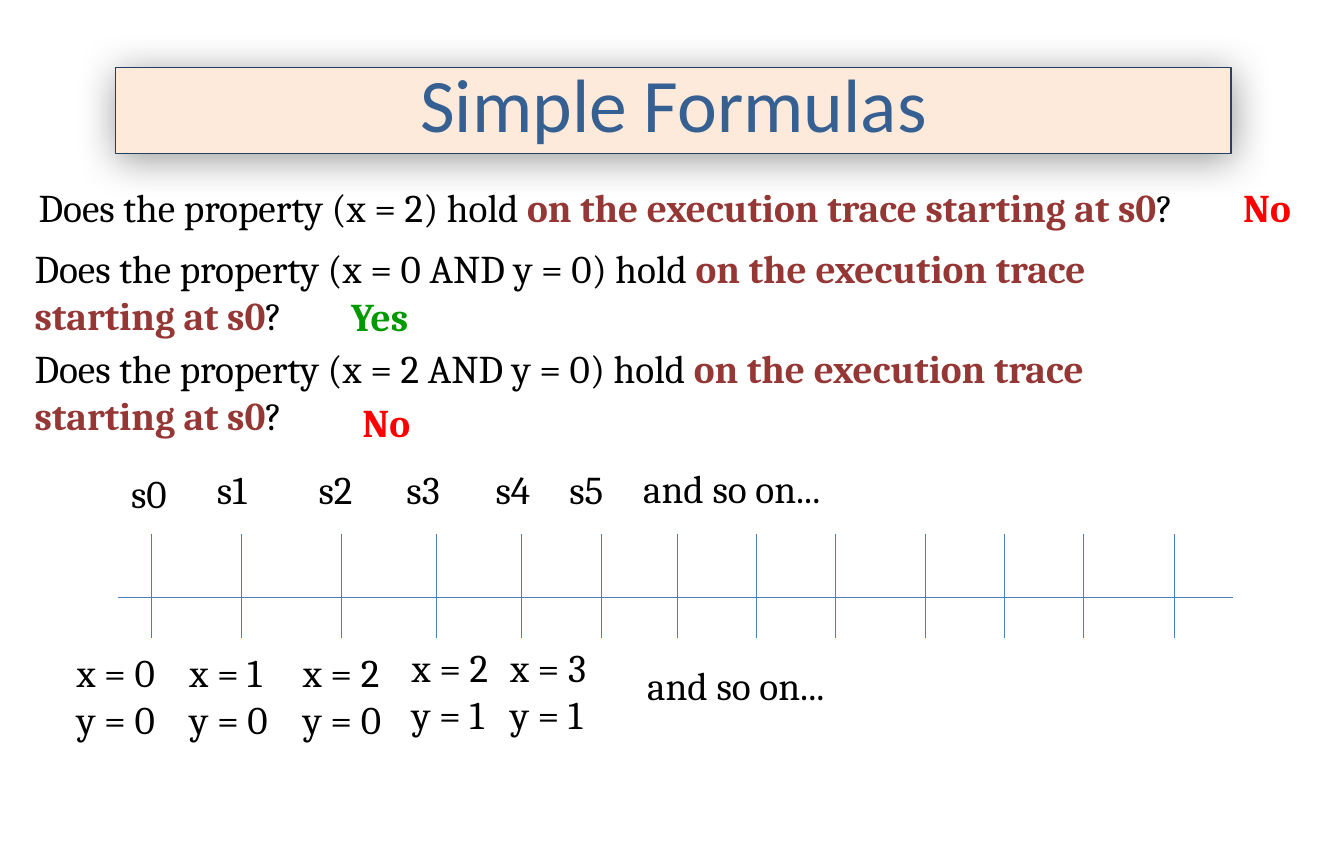
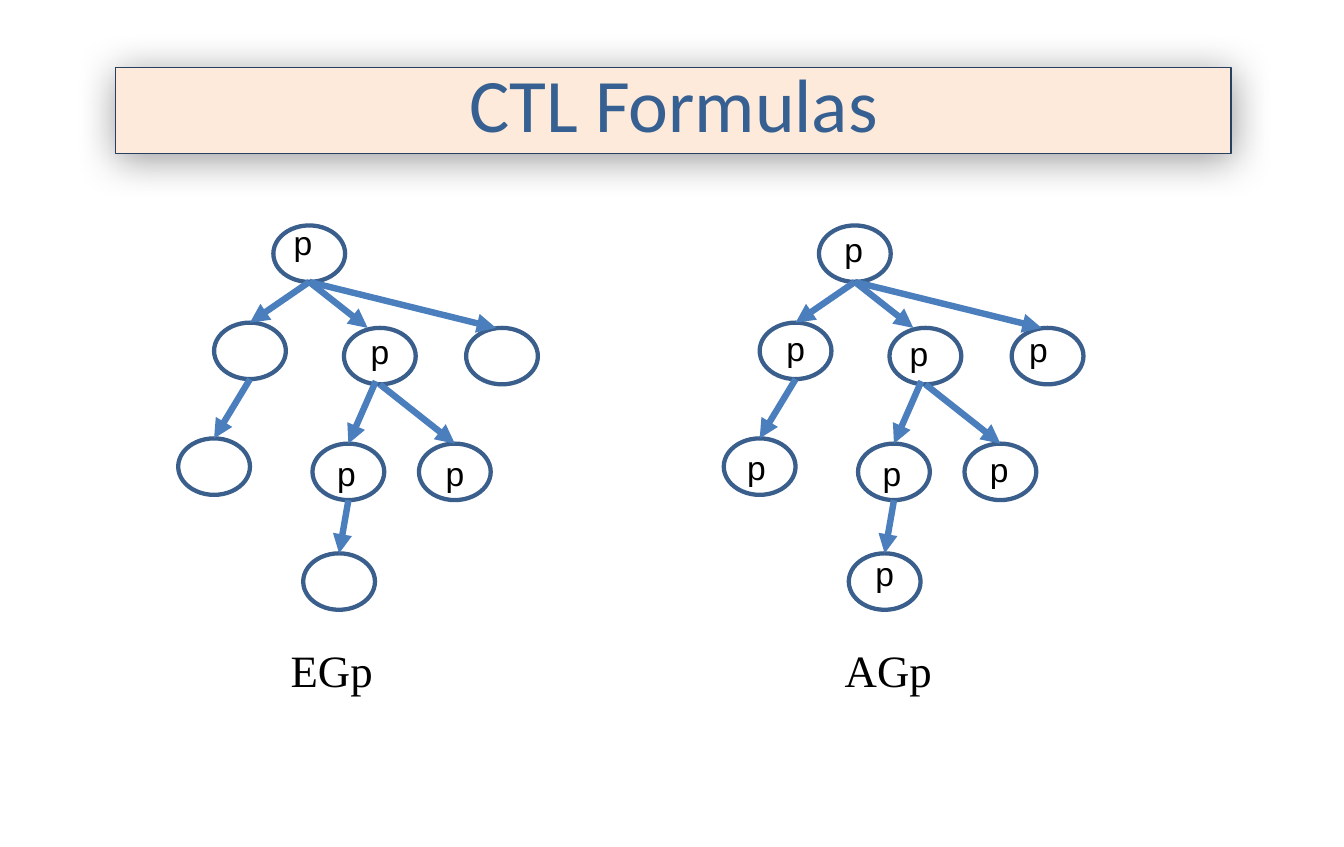
"""Build two slides on temporal logic: simple formulas on a trace and CTL formulas on trees."""
from lxml.etree import SubElement
from pptx import Presentation
from pptx.dml.color import RGBColor
from pptx.enum.shapes import MSO_CONNECTOR, MSO_SHAPE
from pptx.enum.text import MSO_ANCHOR, MSO_AUTO_SIZE, PP_ALIGN
from pptx.oxml.ns import qn
from pptx.util import Cm, Pt

BLACK, MAROON, GREEN, RED = "000000", "953735", "009900", "FF0000"
TITLE_FILL, TITLE_LINE, TITLE_TEXT = "FDEADA", "254061", "376092"
NODE_LINE, CONNECTOR_LINE = "3A5F8C", "4B7EBC"

QUESTIONS = [
    ("x = 2", 0.71, 4.42, 31.98),
    ("x = 0 AND y = 0", 0.61, 5.92, 29.64),
    ("x = 2 AND y = 0", 0.61, 8.41, 29.64),
]
ANSWERS = [("No", RED, 30.58, 4.42), ("Yes", GREEN, 8.46, 7.11), ("No", RED, 8.74, 9.75)]
TICKS = [3.76, 5.99, 8.46, 10.82, 12.93, 14.91, 16.81, 18.75, 20.73, 22.94, 24.92, 26.87, 29.13]
TRACE_LABELS = [
    ("s0", 3, 11.51, 1.6),
    ("s1", 5.13, 11.4, 1.6),
    ("s2", 7.65, 11.4, 1.6),
    ("s3", 9.83, 11.4, 1.6),
    ("s4", 12.04, 11.4, 1.6),
    ("s5", 13.87, 11.4, 1.6),
    ("and so on...", 15.7, 11.38, 8.13),
    ("x = 0\ny = 0", 1.65, 15.95, 2.95),
    ("x = 1\ny = 0", 4.45, 15.95, 2.95),
    ("x = 2\ny = 0", 7.26, 15.95, 2.95),
    ("x = 2\ny = 1", 9.96, 15.82, 2.95),
    ("x = 3\ny = 1", 12.4, 15.82, 2.95),
    ("and so on...", 15.8, 16.26, 8.13),
]

NODE_WIDTH, NODE_HEIGHT = 1.78, 1.4
NODES = {
    "root": (6.78, 5.59),
    "left": (5.31, 8),
    "middle": (8.53, 8.13),
    "right": (11.56, 8.13),
    "left leaf": (4.42, 10.87),
    "middle child": (7.75, 11),
    "middle leaf": (10.39, 11),
    "bottom leaf": (7.52, 13.72),
}
ARROWS = [
    ("root", "middle", (0, 0), -0.3),
    ("root", "right", (0, 0), -0.15),
    ("root", "left", (0, 0), 0),
    ("left", "left leaf", (0, 0), 0),
    ("middle", "middle child", (-0.1, -0.08), 0),
    ("middle", "middle leaf", (0, 0), 0),
    ("middle child", "bottom leaf", (0, 0), 0),
]
TREES = [
    {
        "caption": "EGp", "caption_left": 6.96, "shift": 0,
        "labels": {
            "root": (0.25, -0.2), "middle": (0.41, -0.05),
            "middle child": (0.36, 0.1), "middle leaf": (0.41, 0.1),
        },
    },
    {
        "caption": "AGp", "caption_left": 20.7, "shift": 13.53,
        "labels": {
            "root": (0.38, -0.05), "left": (0.41, 0), "middle": (0.25, 0),
            "right": (0.18, -0.1), "left leaf": (0.33, 0.08), "middle child": (0.36, 0.1),
            "middle leaf": (0.38, 0), "bottom leaf": (0.41, -0.13),
        },
    },
]


def color(value):
    return RGBColor.from_string(value)


def add_run(paragraph, text, font="Cambria", size=27.6, fill=BLACK, bold=False):
    run = paragraph.add_run()
    run.text = text
    run.font.name = font
    run.font.size = Pt(size)
    run.font.bold = bold
    run.font.color.rgb = color(fill)


def add_text(slide, text, left, top, width, height=1.42, **style):
    frame = slide.shapes.add_textbox(Cm(left), Cm(top), Cm(width), Cm(height)).text_frame
    frame.word_wrap = True
    for index, line in enumerate(text.split("\n")):
        paragraph = frame.add_paragraph() if index else frame.paragraphs[0]
        add_run(paragraph, line, **style)
    return frame.paragraphs[0]


def add_line(slide, start, end, width, arrow=False):
    points = [Cm(value) for value in (*start, *end)]
    connector = slide.shapes.add_connector(MSO_CONNECTOR.STRAIGHT, *points)
    connector.line.color.rgb = color(CONNECTOR_LINE)
    connector.line.width = Pt(width)
    if arrow:
        SubElement(connector.line._get_or_add_ln(), qn("a:tailEnd"), type="triangle")
    SubElement(connector._element.spPr, qn("a:effectLst"))


def add_titled_slide(presentation, text):
    slide = presentation.slides.add_slide(presentation.slide_layouts[5])
    title = slide.shapes.title
    title.left, title.top, title.width, title.height = Cm(2.87), Cm(1.68), Cm(27.66), Cm(2.13)
    title.fill.solid()
    title.fill.fore_color.rgb = color(TITLE_FILL)
    title.line.color.rgb = color(TITLE_LINE)
    title.line.width = Pt(1)
    effects = SubElement(title._element.spPr, qn("a:effectLst"))
    shadow = SubElement(effects, qn("a:outerShdw"), blurRad=str(Pt(28)), dist=str(Pt(3)),
                        dir="5400000", rotWithShape="0")
    shadow_color = SubElement(shadow, qn("a:srgbClr"), val=BLACK)
    SubElement(shadow_color, qn("a:alpha"), val="40000")
    frame = title.text_frame
    frame.auto_size = MSO_AUTO_SIZE.NONE
    frame.vertical_anchor = MSO_ANCHOR.MIDDLE
    paragraph = frame.paragraphs[0]
    paragraph.alignment = PP_ALIGN.CENTER
    paragraph.line_spacing = 0.8
    add_run(paragraph, text, font="Calibri", size=53.1, fill=TITLE_TEXT)
    return slide


def build_trace(slide):
    for formula, left, top, width in QUESTIONS:
        paragraph = add_text(slide, f"Does the property ({formula}) hold ", left, top, width)
        add_run(paragraph, "on the execution trace starting at s0", fill=MAROON, bold=True)
        add_run(paragraph, "?")
    for answer, fill, left, top in ANSWERS:
        add_text(slide, answer, left, top, 3.07, fill=fill, bold=True)
    add_line(slide, (2.92, 14.81), (30.58, 14.81), 0.75)
    for tick in TICKS:
        add_line(slide, (tick, 13.23), (tick, 15.82), 0.75)
    for label in TRACE_LABELS:
        add_text(slide, *label)


def build_tree(slide, tree):
    places = {name: (left + tree["shift"], top) for name, (left, top) in NODES.items()}
    for left, top in places.values():
        node = slide.shapes.add_shape(
            MSO_SHAPE.OVAL, Cm(left), Cm(top), Cm(NODE_WIDTH), Cm(NODE_HEIGHT))
        node.shadow.inherit = False
        node.fill.background()
        node.line.color.rgb = color(NODE_LINE)
        node.line.width = Pt(3)
    for parent, child, (start_x, start_y), end_x in ARROWS:
        (parent_left, parent_top), (child_left, child_top) = places[parent], places[child]
        start = (parent_left + NODE_WIDTH / 2 + start_x, parent_top + NODE_HEIGHT + start_y)
        end = (child_left + NODE_WIDTH / 2 + end_x, child_top)
        add_line(slide, start, end, 4.5, arrow=True)
    for name, (offset_x, offset_y) in tree["labels"].items():
        left, top = places[name]
        add_text(slide, "p", left + offset_x, top + offset_y, 1, 1.27, font="Arial", size=23.6)
    add_text(slide, tree["caption"], tree["caption_left"], 15.8, 4.65, 1.6,
             font="Times New Roman", size=31.5)


def main():
    presentation = Presentation()
    presentation.slide_width, presentation.slide_height = Cm(33.33), Cm(21)
    build_trace(add_titled_slide(presentation, "Simple Formulas"))
    tree_slide = add_titled_slide(presentation, "CTL Formulas")
    for tree in TREES:
        build_tree(tree_slide, tree)
    presentation.save("out.pptx")


if __name__ == "__main__":
    main()
